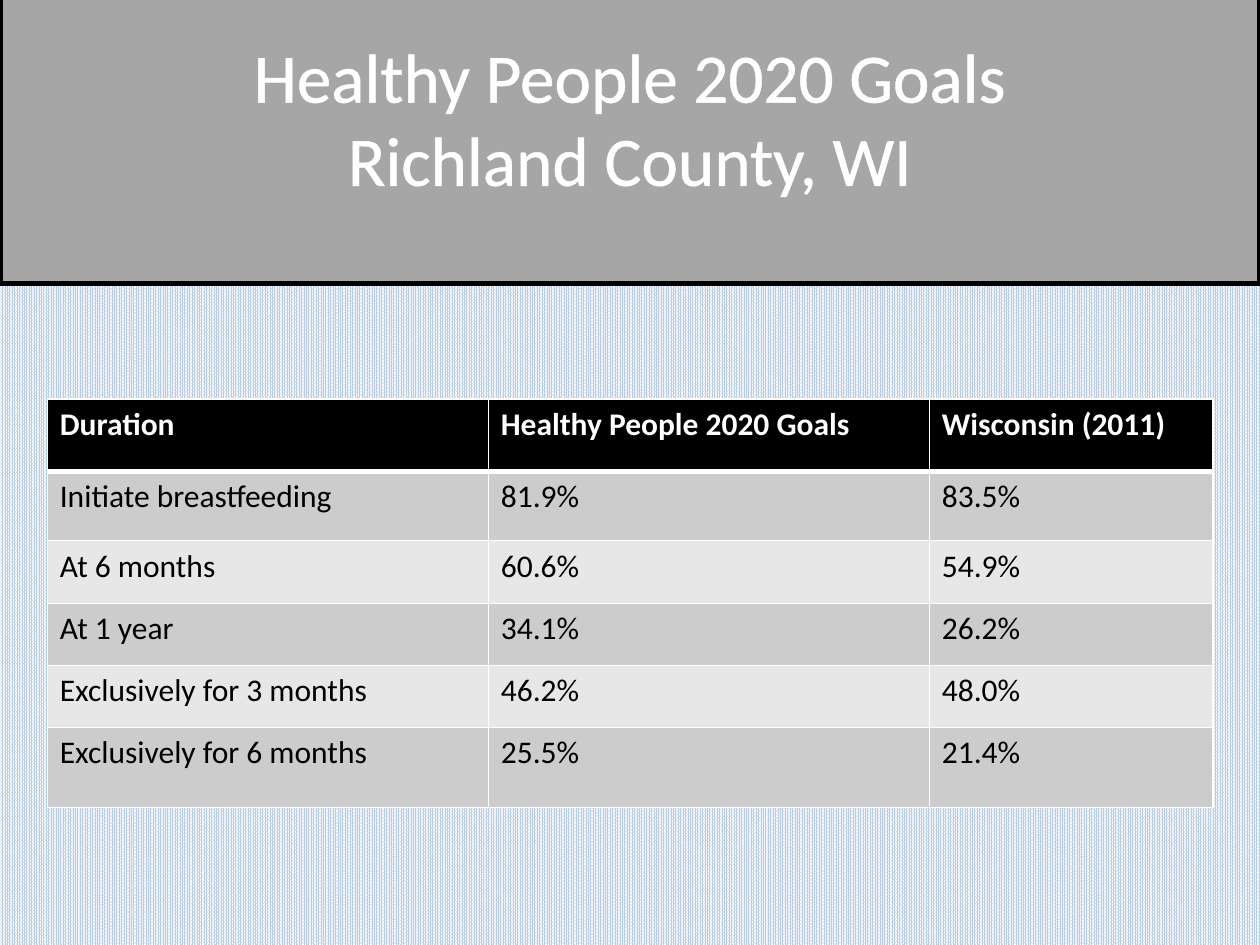
from dataclasses import dataclass

from lxml import etree
from pptx import Presentation
from pptx.dml.color import RGBColor
from pptx.enum import dml, shapes, text
from pptx.oxml import ns
from pptx.util import Pt


@dataclass(frozen=True)
class Theme:
    font: str = "Calibri"
    white: str = "FFFFFF"
    black: str = "000000"
    banner: str = "A6A6A6"
    weave: str = "B9CDE5"
    bands: tuple = ("CCCCCC", "E7E7E7")
    title_size: float = 39.6
    table_size: float = 18
    title_outline: float = 1.45
    banner_line: float = 3
    grid_line: float = 1
    header_line: float = 3


THEME = Theme()
WIDTH, HEIGHT = 720, 540
COLUMNS = (252, 252, 162)
ROWS = (41.5, 39.5, 35.75, 35.5, 35.5, 45.75)
GOALS = (
    ("Duration", "Healthy People 2020 Goals", "Wisconsin (2011)"),
    ("Initiate breastfeeding", "81.9%", "83.5%"),
    ("At 6 months", "60.6%", "54.9%"),
    ("At 1 year", "34.1%", "26.2%"),
    ("Exclusively for 3 months", "46.2%", "48.0%"),
    ("Exclusively for 6 months", "25.5%", "21.4%"),
)


def rgb(value):
    return RGBColor.from_string(value)


def apply(target, formats):
    for name, value in formats.items():
        setattr(target, name, value)


def format_font(font, size, color, bold=False):
    apply(font, {"name": THEME.font, "size": Pt(size), "bold": bold})
    font.color.rgb = rgb(color)


def paint(fill, color):
    fill.solid()
    fill.fore_color.rgb = rgb(color)


def insert_line(parent, index, tag, color, width):
    line = etree.Element(ns.qn(tag), w=str(int(Pt(width))))
    solid = etree.SubElement(line, ns.qn("a:solidFill"))
    etree.SubElement(solid, ns.qn("a:srgbClr"), val=color)
    parent.insert(index, line)


def set_background(slide):
    fill = slide.background.fill
    fill.patterned()
    fill.pattern = dml.MSO_PATTERN.PERCENT_90
    fill.fore_color.rgb = rgb(THEME.weave)
    fill.back_color.rgb = rgb(THEME.white)


def add_banner(slide):
    banner = slide.shapes.add_shape(
        shapes.MSO_SHAPE.RECTANGLE, Pt(0), Pt(-18), Pt(WIDTH), Pt(180))
    banner.shadow.inherit = False
    paint(banner.fill, THEME.banner)
    banner.line.color.rgb = rgb(THEME.black)
    banner.line.width = Pt(THEME.banner_line)
    slide.shapes.element.insert(2, banner.element)


def set_title(slide, wording):
    title = slide.shapes.title
    apply(title, {"left": Pt(36), "top": Pt(21.6),
                  "width": Pt(648), "height": Pt(90)})
    frame = title.text_frame
    frame.text = wording
    apply(frame, {"word_wrap": True, "auto_size": text.MSO_AUTO_SIZE.NONE,
                  "vertical_anchor": text.MSO_ANCHOR.MIDDLE})
    paragraph = frame.paragraphs[0]
    paragraph.alignment = text.PP_ALIGN.CENTER
    for run in paragraph.runs:
        format_font(run.font, THEME.title_size, THEME.white)
        insert_line(run.font.fill._xPr, 0, "a:ln",
                    THEME.white, THEME.title_outline)


def fill_cell(cell, wording, is_header, band):
    cell.text = wording
    color = THEME.white if is_header else THEME.black
    format_font(cell.text_frame.paragraphs[0].runs[0].font,
                THEME.table_size, color, is_header)
    paint(cell.fill, THEME.black if is_header else band)
    bottom = THEME.header_line if is_header else THEME.grid_line
    borders = {"a:lnL": THEME.grid_line, "a:lnR": THEME.grid_line,
               "a:lnT": THEME.grid_line, "a:lnB": bottom}
    properties = cell._tc.get_or_add_tcPr()
    for index, (side, width) in enumerate(borders.items()):
        insert_line(properties, index, side, THEME.white, width)


def add_goals_table(slide):
    goals = slide.shapes.add_table(
        len(ROWS), len(COLUMNS), Pt(27), Pt(228),
        Pt(sum(COLUMNS)), Pt(sum(ROWS))).table
    for column, width in zip(goals.columns, COLUMNS):
        column.width = Pt(width)
    for index, (row, height, record) in enumerate(zip(goals.rows, ROWS, GOALS)):
        row.height = Pt(height)
        band = THEME.bands[(index - 1) % 2]
        for cell, wording in zip(row.cells, record):
            fill_cell(cell, wording, index == 0, band)


def main():
    deck = Presentation()
    apply(deck, {"slide_width": Pt(WIDTH), "slide_height": Pt(HEIGHT)})
    slide = deck.slides.add_slide(deck.slide_layouts[5])
    set_background(slide)
    add_banner(slide)
    set_title(slide, "Healthy People 2020 Goals\vRichland County, WI")
    add_goals_table(slide)
    deck.save("out.pptx")


if __name__ == "__main__":
    main()
